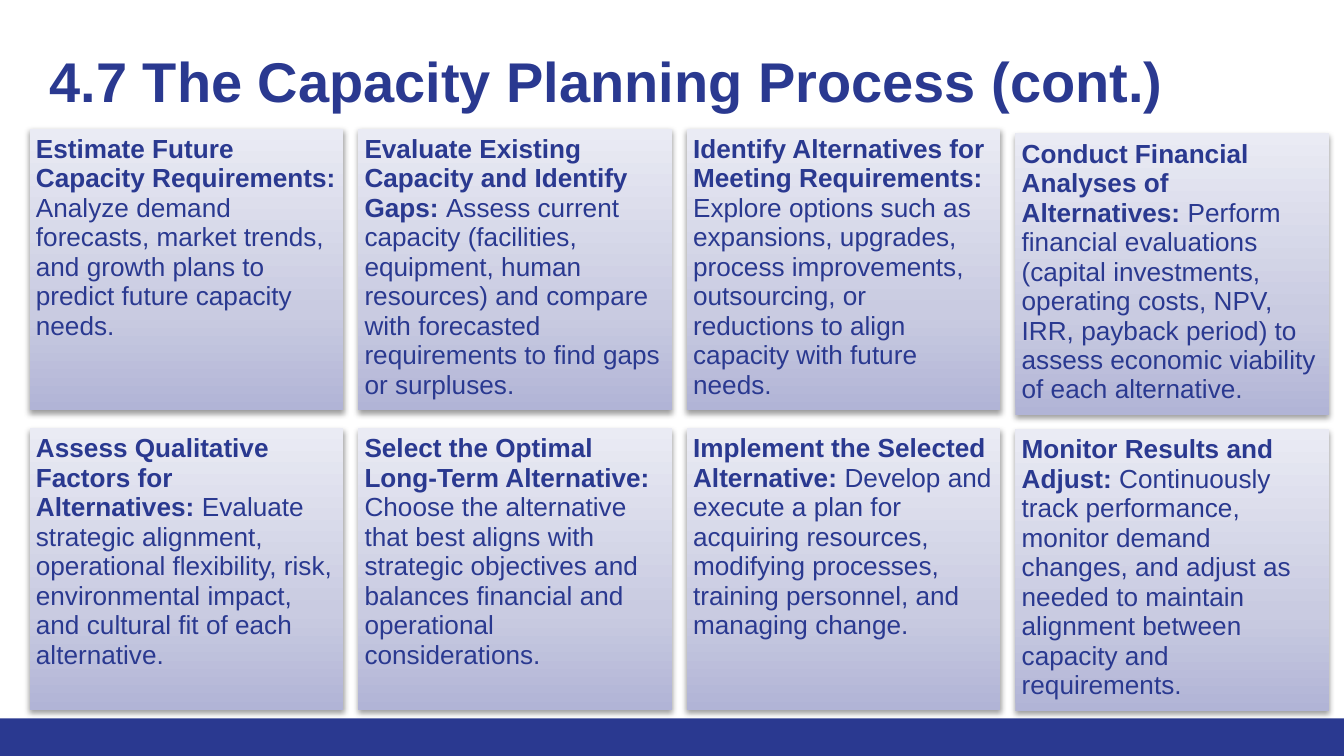
from pptx import Presentation
from pptx.dml.color import RGBColor
from pptx.enum.shapes import MSO_SHAPE
from pptx.enum.text import MSO_ANCHOR, PP_ALIGN
from pptx.oxml import parse_xml
from pptx.oxml.ns import nsdecls
from pptx.util import Cm, Pt

RECT = MSO_SHAPE.RECTANGLE
TOP = MSO_ANCHOR.TOP
LEFT = PP_ALIGN.LEFT

NAVY = RGBColor(0x2A, 0x39, 0x90)
BLACK = RGBColor(0x00, 0x00, 0x00)
CARD_STOPS = [
    (0, RGBColor(0xB1, 0xB4, 0xD6)),
    (35, RGBColor(0xC9, 0xCB, 0xE1)),
    (100, RGBColor(0xEA, 0xEB, 0xF4)),
]

FONT = "Arial"
COLUMNS = 4
CARD_LEFT, CARD_WIDTH, CARD_HEIGHT = 0.56, 5.93, 5.33
COLUMN_STEP = 6.21
ROW_TOPS = (2.43, 8.09)
LAST_COLUMN_DROPS = (0.09, 0.02)

STEPS = [
    ("Estimate Future Capacity Requirements: ",
     "Analyze demand forecasts, market trends, and growth plans to predict "
     "future capacity needs."),
    ("Evaluate Existing Capacity and Identify Gaps: ",
     "Assess current capacity (facilities, equipment, human resources) and "
     "compare with forecasted requirements to find gaps or surpluses."),
    ("Identify Alternatives for Meeting Requirements: ",
     "Explore options such as expansions, upgrades, process improvements, "
     "outsourcing, or reductions to align capacity with future needs."),
    ("Conduct Financial Analyses of Alternatives: ",
     "Perform financial evaluations (capital investments, operating costs, "
     "NPV, IRR, payback period) to assess economic viability of each "
     "alternative."),
    ("Assess Qualitative Factors for Alternatives: ",
     "Evaluate strategic alignment, operational flexibility, risk, "
     "environmental impact, and cultural fit of each alternative."),
    ("Select the Optimal Long-Term Alternative: ",
     "Choose the alternative that best aligns with strategic objectives and "
     "balances financial and operational considerations."),
    ("Implement the Selected Alternative: ",
     "Develop and execute a plan for acquiring resources, modifying "
     "processes, training personnel, and managing change."),
    ("Monitor Results and Adjust: ",
     "Continuously track performance, monitor demand changes, and adjust as "
     "needed to maintain alignment between capacity and requirements."),
]


def set_attributes(target, values):
    """Set each named attribute of the target."""
    for name, value in values.items():
        setattr(target, name, value)


def set_frame(tf, inset, inset_top):
    """Wrap the text from the top left with the given insets."""
    set_attributes(tf, {
        "word_wrap": True,
        "vertical_anchor": TOP,
        "margin_left": Cm(inset),
        "margin_right": Cm(inset),
        "margin_top": Cm(inset_top),
        "margin_bottom": Cm(inset),
    })
    tf.paragraphs[0].alignment = LEFT


def add_run(p, text, size, bold):
    """Append a navy run to a paragraph."""
    r = p.add_run()
    r.text = text
    set_attributes(r.font, {"name": FONT, "size": Pt(size), "bold": bold})
    r.font.color.rgb = NAVY


def add_title(s, text):
    """Add the slide title."""
    sp = s.shapes.add_textbox(Cm(0.69), Cm(0.51), Cm(23.37), Cm(2.26))
    set_frame(sp.text_frame, 0.25, 0.37)
    add_run(sp.text_frame.paragraphs[0], text, 30, True)


def add_footer(s, prs):
    """Add the navy band along the bottom edge."""
    top = Cm(13.58)
    sp = s.shapes.add_shape(RECT, 0, top, prs.slide_width, prs.slide_height - top)
    sp.shadow.inherit = False
    sp.fill.solid()
    sp.fill.fore_color.rgb = NAVY
    sp.line.fill.background()


def style_card(sp):
    """Give a card its upward gradient and soft shadow."""
    sp.line.fill.background()
    stops = "".join(
        f'<a:gs pos="{pos * 1000}"><a:srgbClr val="{color}"/></a:gs>'
        for pos, color in CARD_STOPS)
    gradient = parse_xml(
        f'<a:gradFill {nsdecls("a")} rotWithShape="1"><a:gsLst>{stops}</a:gsLst>'
        '<a:lin ang="16200000" scaled="0"/></a:gradFill>')
    shadow = parse_xml(
        f'<a:effectLst {nsdecls("a")}><a:outerShdw blurRad="{Pt(3.1)}" '
        f'dist="{Pt(1.6)}" dir="5400000" rotWithShape="0">'
        f'<a:srgbClr val="{BLACK}"><a:alpha val="38000"/></a:srgbClr>'
        '</a:outerShdw></a:effectLst>')
    props = sp._element.spPr
    props.insert(2, gradient)
    props.append(shadow)


def add_card(s, left, top, heading, body):
    """Add one planning step as a card."""
    sp = s.shapes.add_shape(
        RECT, Cm(left), Cm(top), Cm(CARD_WIDTH), Cm(CARD_HEIGHT))
    style_card(sp)
    set_frame(sp.text_frame, 0.12, 0.12)
    p = sp.text_frame.paragraphs[0]
    set_attributes(p, {"line_spacing": 0.94, "space_after": Pt(4.9)})
    add_run(p, heading, 14, True)
    add_run(p, body, 14, False)


def main():
    """Build the capacity planning slide."""
    prs = Presentation()
    set_attributes(prs, {"slide_width": Cm(25.4), "slide_height": Cm(14.29)})
    s = prs.slides.add_slide(prs.slide_layouts[6])
    add_footer(s, prs)
    add_title(s, "4.7 The Capacity Planning Process (cont.)")
    for i, (heading, body) in enumerate(STEPS):
        row, column = divmod(i, COLUMNS)
        drop = LAST_COLUMN_DROPS[row] if column == COLUMNS - 1 else 0
        add_card(s, CARD_LEFT + column * COLUMN_STEP, ROW_TOPS[row] + drop,
                 heading, body)
    prs.save("out.pptx")


if __name__ == "__main__":
    main()
